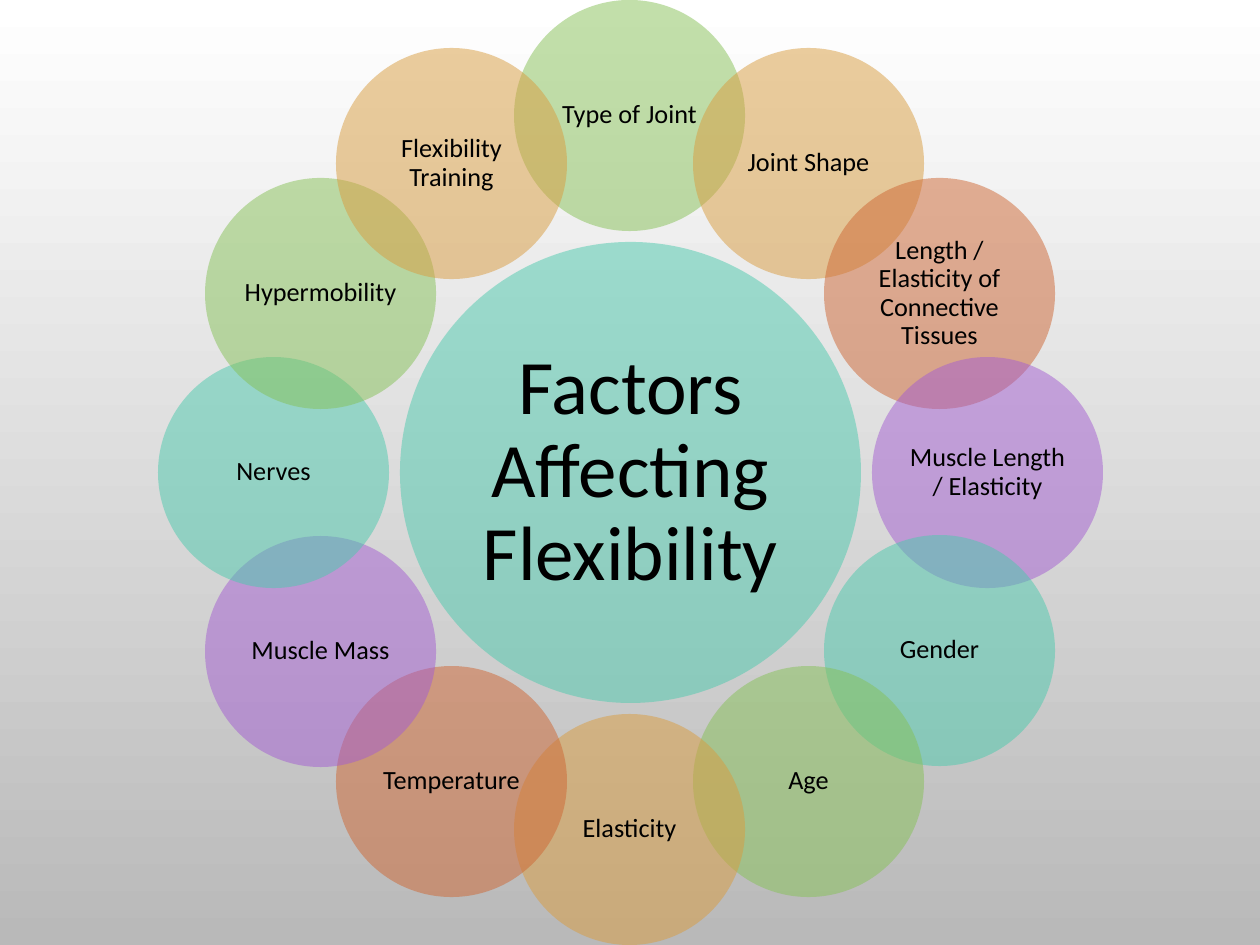
"""Build a slide with a ring of flexibility factors around a central title."""
from itertools import cycle
from math import cos, radians, sin

from lxml.etree import SubElement
from pptx import Presentation
from pptx.dml.color import RGBColor
from pptx.enum.shapes import MSO_SHAPE as Shape
from pptx.enum.text import MSO_ANCHOR as Anchor, PP_ALIGN as Align
from pptx.oxml.ns import qn
from pptx.util import Pt

PX = 914400 / 126
WIDTH, HEIGHT = 1260, 945
RING_RADIUS = 357
HUB_SIZE, FACTOR_SIZE = 461, 231

WHITE = RGBColor(0xFF, 0xFF, 0xFF)
GRAY = RGBColor(0xB9, 0xB9, 0xB9)
BLACK = RGBColor(0x00, 0x00, 0x00)
TEAL = RGBColor(0x4B, 0xCA, 0xAD)
GREEN = RGBColor(0x86, 0xC1, 0x57)
GOLD = RGBColor(0xD9, 0x9C, 0x3F)
ORANGE = RGBColor(0xCE, 0x66, 0x33)
PURPLE = RGBColor(0xA3, 0x5D, 0xD1)

FACTORS = [
    "Type of Joint",
    "Joint Shape",
    "Length / Elasticity of Connective Tissues",
    "Muscle Length / Elasticity",
    "Gender",
    "Age",
    "Elasticity",
    "Temperature",
    "Muscle Mass",
    "Nerves",
    "Hypermobility",
    "Flexibility Training",
]


def px(length):
    return round(length * PX)


def add_circle(shapes, text, *, center, diameter, color, size, inset):
    left, top = (round(middle - diameter / 2) for middle in center)
    shape = shapes.add_shape(Shape.OVAL, px(left), px(top), px(diameter), px(diameter))
    shape.shadow.inherit = False
    shape.line.fill.background()
    shape.fill.solid()
    shape.fill.fore_color.rgb = color
    color_element = shape.fill._xPr.find(qn("a:solidFill"))[0]
    SubElement(color_element, qn("a:alpha"), val="50000")
    frame = shape.text_frame
    frame.word_wrap = True
    frame.vertical_anchor = Anchor.MIDDLE
    frame.margin_left = frame.margin_right = px(inset)
    frame.margin_top = frame.margin_bottom = px(inset)
    paragraph = frame.paragraphs[0]
    paragraph.alignment = Align.CENTER
    paragraph.line_spacing = 0.9
    run = paragraph.add_run()
    run.text = text
    run.font.name = "Calibri"
    run.font.size = Pt(size)
    run.font.color.rgb = BLACK


presentation = Presentation()
presentation.slide_width = px(WIDTH)
presentation.slide_height = px(HEIGHT)
slide = presentation.slides.add_slide(presentation.slide_layouts[6])

background = slide.background.fill
background.gradient()
background.gradient_angle = 270
for stop, color, position in zip(background.gradient_stops, (WHITE, GRAY), (0, 1)):
    stop.color.rgb = color
    stop.position = position

diagram = slide.shapes.add_group_shape().shapes
center_x, center_y = WIDTH / 2, HEIGHT / 2
add_circle(diagram, "Factors Affecting Flexibility", center=(center_x, center_y),
           diameter=HUB_SIZE, color=TEAL, size=44, inset=8)

palette = cycle([GREEN, GOLD, ORANGE, PURPLE, TEAL])
for index, (factor, color) in enumerate(zip(FACTORS, palette)):
    angle = radians(index * 360 / len(FACTORS))
    center = (center_x + RING_RADIUS * sin(angle), center_y - RING_RADIUS * cos(angle))
    add_circle(diagram, factor, center=center, diameter=FACTOR_SIZE,
               color=color, size=15, inset=3)

presentation.save("out.pptx")
